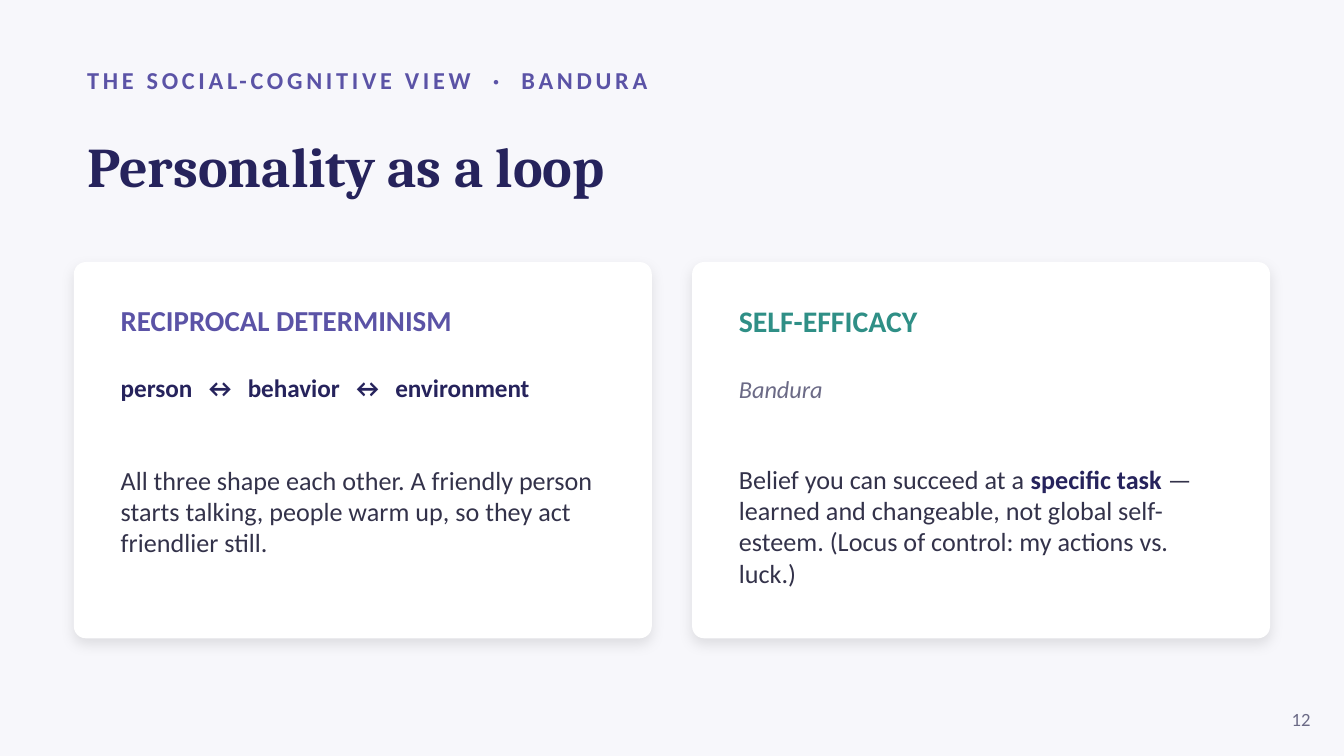
from lxml import etree
from pptx import Presentation
from pptx.dml.color import RGBColor
from pptx.enum.shapes import MSO_SHAPE
from pptx.enum.text import MSO_ANCHOR, MSO_AUTO_SIZE, PP_ALIGN
from pptx.oxml.ns import qn
from pptx.util import Pt

ROUNDED = MSO_SHAPE.ROUNDED_RECTANGLE
TOP, MIDDLE = MSO_ANCHOR.TOP, MSO_ANCHOR.MIDDLE
LEFT, RIGHT = PP_ALIGN.LEFT, PP_ALIGN.RIGHT
NO_AUTOFIT = MSO_AUTO_SIZE.NONE

PX = 4572  # EMU per px, 200 px to the inch
PAGE_WIDTH, PAGE_HEIGHT = 2000, 1125

PAPER = RGBColor(0xF7, 0xF7, 0xFB)
WHITE = RGBColor(0xFF, 0xFF, 0xFF)
VIOLET = RGBColor(0x5B, 0x53, 0xA6)
NAVY = RGBColor(0x26, 0x23, 0x5C)
TEAL = RGBColor(0x2F, 0x8F, 0x86)
INK = RGBColor(0x33, 0x32, 0x4A)
GREY = RGBColor(0x6B, 0x6A, 0x86)

BODY_FONT, TITLE_FONT = "Calibri", "Cambria"
LINE_HEIGHT = 1.22  # line height as a multiple of the text size


def add_span(para, text, size=14, color=INK, font=BODY_FONT,
             bold=False, italic=False, spacing=0):
    """Append formatted text to a paragraph; spacing is in points."""
    span = para.add_run()
    span.text = text
    span.font.size = Pt(size)
    span.font.name = font
    span.font.color.rgb = color
    span.font.bold = bold
    span.font.italic = italic
    if spacing:
        span.font._element.set("spc", str(spacing * 100))


class SlideBuilder:
    def __init__(self, deck):
        self.page = deck.slides.add_slide(deck.slide_layouts[5])
        fill = self.page.background.fill
        fill.solid()
        fill.fore_color.rgb = PAPER

    def frame(self, box, anchor, align):
        """Set up a text frame and return its first paragraph."""
        frame = box.text_frame
        frame.word_wrap = True
        frame.auto_size = NO_AUTOFIT
        frame.vertical_anchor = anchor
        para = frame.paragraphs[0]
        para.alignment = align
        return para

    def title(self, text, left, top, width, height, **style):
        box = self.page.shapes.title
        box.left, box.top = left * PX, top * PX
        box.width, box.height = width * PX, height * PX
        add_span(self.frame(box, MIDDLE, LEFT), text, **style)

    def text_box(self, left, top, width, height, anchor=MIDDLE, align=LEFT):
        box = self.page.shapes.add_textbox(
            left * PX, top * PX, width * PX, height * PX)
        return self.frame(box, anchor, align), box.text_frame

    def label(self, text, *place, align=LEFT, **style):
        para, _ = self.text_box(*place, align=align)
        add_span(para, text, **style)

    def panel(self, left, top, width, height):
        shape = self.page.shapes.add_shape(
            ROUNDED, left * PX, top * PX, width * PX, height * PX)
        shape.adjustments[0] = 0.032
        shape.fill.solid()
        shape.fill.fore_color.rgb = WHITE
        shape.line.fill.background()
        shape.shadow.inherit = False
        # Soft shadow below the panel
        effects = shape._element.spPr.find(qn("a:effectLst"))
        shadow = etree.SubElement(
            effects, qn("a:outerShdw"), blurRad=str(Pt(7)), dist=str(Pt(3)),
            dir="5400000", algn="bl", rotWithShape="0")
        tint = etree.SubElement(shadow, qn("a:srgbClr"), val="000000")
        etree.SubElement(tint, qn("a:alpha"), val="10000")

    def card(self, left, heading, subtitle, body):
        self.panel(left, 390, 860, 560)
        para, frame = self.text_box(left + 50, 440, 760, 490, anchor=TOP)
        heading_text, heading_style = heading
        add_span(para, heading_text, bold=True, **heading_style)

        # One line of air under the heading, two under the subtitle
        subtitle_text, subtitle_style = subtitle
        para = frame.add_paragraph()
        para.space_before = Pt(heading_style["size"] * LINE_HEIGHT)
        add_span(para, subtitle_text, **subtitle_style)

        para = frame.add_paragraph()
        para.space_before = Pt(2 * subtitle_style["size"] * LINE_HEIGHT)
        for text, style in body:
            add_span(para, text, **style)


def main():
    deck = Presentation()
    deck.slide_width = PAGE_WIDTH * PX
    deck.slide_height = PAGE_HEIGHT * PX
    slide = SlideBuilder(deck)

    # Header
    slide.label("THE SOCIAL-COGNITIVE VIEW  ·  BANDURA", 110, 84, 1800, 70,
                size=13, color=VIOLET, bold=True, spacing=2)
    slide.title("Personality as a loop", 110, 156, 1780, 180,
                size=30, color=NAVY, font=TITLE_FONT, bold=True)

    # Concept cards
    cards = [
        (("RECIPROCAL DETERMINISM", dict(size=15.5, color=VIOLET)),
         ("person  ↔  behavior  ↔  environment",
          dict(size=13.5, color=NAVY, bold=True)),
         [("All three shape each other. A friendly person starts talking, "
           "people warm up, so they act friendlier still.", {})]),
        (("SELF-EFFICACY", dict(size=16, color=TEAL)),
         ("Bandura", dict(size=13, color=GREY, italic=True)),
         [("Belief you can succeed at a ", {}),
          ("specific task", dict(color=NAVY, bold=True)),
          (" — learned and changeable, not global self-esteem. "
           "(Locus of control: my actions vs. luck.)", {})]),
    ]
    for index, content in enumerate(cards):
        slide.card(110 + index * 920, *content)

    # Page number
    slide.label("12", 1870, 1040, 100, 60, align=RIGHT, size=10, color=GREY)

    deck.save("out.pptx")


if __name__ == "__main__":
    main()
